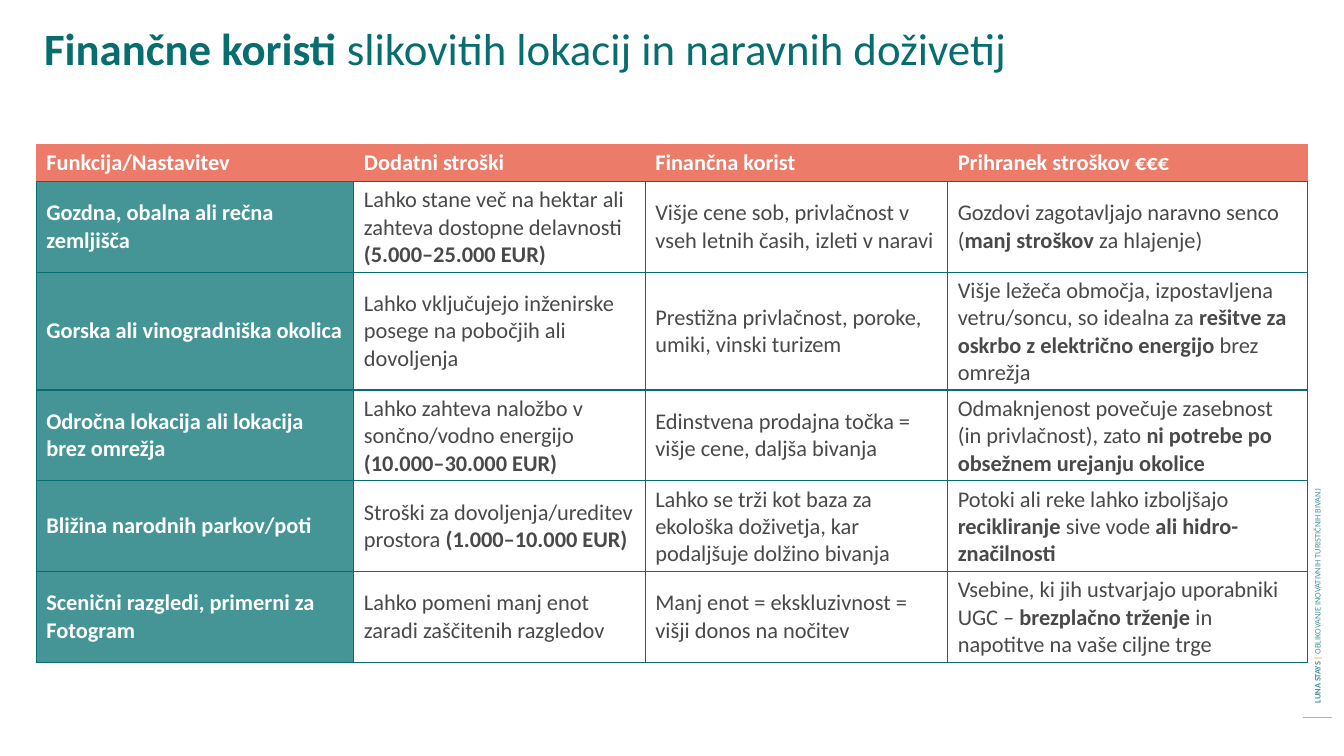
from pptx import Presentation
from pptx.dml.color import RGBColor as RGB
from pptx.enum.shapes import MSO_CONNECTOR as Conn
from pptx.enum.text import MSO_ANCHOR as Anchor
from pptx.oxml.ns import qn
from pptx.util import Inches, Pt
from lxml.etree import SubElement as Sub

DARK, TEAL, CORAL = "086D6E", "459597", "EC7C69"
WHITE, GRAY, GOLD = "FFFFFF", "494949", "FBA63D"
WIDTHS = [3.15, 2.89, 3, 3.57]
HEIGHTS = [0.37, 0.9, 1.17, 0.9, 0.9, 0.9]
ROWS = [
    ["*Funkcija/Nastavitev", "*Dodatni stroški", "*Finančna korist",
     "*Prihranek stroškov €€€"],
    ["*Gozdna, obalna ali rečna zemljišča",
     "Lahko stane več na hektar ali zahteva dostopne delavnosti *(5.000–25.000 EUR)",
     "Višje cene sob, privlačnost v vseh letnih časih, izleti v naravi",
     "Gozdovi zagotavljajo naravno senco (*manj stroškov *za hlajenje)"],
    ["*Gorska ali vinogradniška okolica",
     "Lahko vključujejo inženirske posege na pobočjih ali dovoljenja",
     "Prestižna privlačnost, poroke, umiki, vinski turizem",
     "Višje ležeča območja, izpostavljena vetru/soncu, so idealna za "
     "*rešitve za oskrbo z električno energijo* brez omrežja"],
    ["*Odročna lokacija ali lokacija brez omrežja",
     "Lahko zahteva naložbo v sončno/vodno energijo *(10.000–30.000 EUR)",
     "Edinstvena prodajna točka = višje cene, daljša bivanja",
     "Odmaknjenost povečuje zasebnost (in privlačnost), zato "
     "*ni potrebe po obsežnem urejanju okolice"],
    ["*Bližina narodnih parkov/poti",
     "Stroški za dovoljenja/ureditev prostora *(1.000–10.000 EUR)",
     "Lahko se trži kot baza za ekološka doživetja, kar podaljšuje dolžino bivanja",
     "Potoki ali reke lahko izboljšajo *recikliranje* sive vode *ali hidro-značilnosti"],
    ["*Scenični razgledi, primerni za Fotogram",
     "Lahko pomeni manj enot zaradi zaščitenih razgledov",
     "Manj enot = ekskluzivnost = višji donos na nočitev",
     "Vsebine, ki jih ustvarjajo uporabniki UGC – *brezplačno trženje *"
     "in napotitve na vaše ciljne trge"],
]


def color(code):
    """Turn a hex string into a colour."""
    return RGB.from_string(code)


def add_run(para, text, size, code, bold):
    """Append one formatted run to a paragraph."""
    run = para.add_run()
    run.text = text
    style = {"name": "Calibri", "size": Pt(size), "bold": bold}
    for key, val in style.items():
        setattr(run.font, key, val)
    run.font.color.rgb = color(code)


def add_rich(para, text, size, code):
    """Write text in which each asterisk toggles bold."""
    for i, part in enumerate(text.split("*")):
        if part:
            add_run(para, part, size, code, i % 2 == 1)


def add_box(slide, left, top, width, height):
    """Add a wrapping text box."""
    box = slide.shapes.add_textbox(*map(Inches, (left, top, width, height)))
    box.text_frame.word_wrap = True
    return box


def add_edges(cell, sides):
    """Draw the named cell borders and clear the others."""
    props = cell._tc.get_or_add_tcPr()
    for side in "LRTB":
        line = Sub(props, qn("a:ln" + side), w=str(Pt(1)))
        if side in sides:
            fill = Sub(line, qn("a:solidFill"))
            Sub(fill, qn("a:srgbClr"), val=DARK)
        else:
            Sub(line, qn("a:noFill"))


def fill_cell(cell, text, row, col):
    """Write and style one table cell."""
    head, lead = row == 0, col == 0
    cell.vertical_anchor = Anchor.MIDDLE
    add_rich(cell.text_frame.paragraphs[0], text, 16,
             WHITE if head or lead else GRAY)
    add_edges(cell, "B" if head else "LRTB")
    if head or lead:
        cell.fill.solid()
        cell.fill.fore_color.rgb = color(CORAL if head else TEAL)
    else:
        cell.fill.background()


def add_grid(slide):
    """Add the table of benefits."""
    table = slide.shapes.add_table(
        len(ROWS), len(WIDTHS), Inches(0.36), Inches(1.43),
        Inches(sum(WIDTHS)), Inches(sum(HEIGHTS))).table
    for col, width in zip(table.columns, WIDTHS):
        col.width = Inches(width)
    for row, height in zip(table.rows, HEIGHTS):
        row.height = Inches(height)
    for r, texts in enumerate(ROWS):
        for c, text in enumerate(texts):
            fill_cell(table.cell(r, c), text, r, c)


def add_side(slide):
    """Add the rotated side label and its short rule."""
    rule = slide.shapes.add_connector(
        Conn.STRAIGHT, Inches(12.92), Inches(7.12), Inches(13.21), Inches(7.12))
    rule.line.color.rgb = color(GOLD)
    rule.line.width = Pt(0.75)
    Sub(rule._element.spPr, qn("a:effectLst"))
    box = add_box(slide, 10.18, 4.09, 5.77, 0.2)
    box.rotation = 270
    box.text_frame.vertical_anchor = Anchor.MIDDLE
    para = box.text_frame.paragraphs[0]
    add_run(para, "LUNA STAYS ", 6, TEAL, True)
    add_run(para, "| ", 6, GOLD, True)
    add_run(para, "OBLIKOVANJE INOVATIVNIH TURISTIČNIH BIVANJ", 6, TEAL, False)


def main():
    """Build and save the slide."""
    deck = Presentation()
    deck.slide_width, deck.slide_height = Inches(13.33), Inches(7.5)
    slide = deck.slides.add_slide(deck.slide_layouts[6])
    add_side(slide)
    add_grid(slide)
    title = add_box(slide, 0.34, 0.16, 11.4, 0.64)
    add_rich(title.text_frame.paragraphs[0],
             "*Finančne koristi *slikovitih lokacij in naravnih doživetij", 32, DARK)
    deck.save("out.pptx")


if __name__ == "__main__":
    main()
